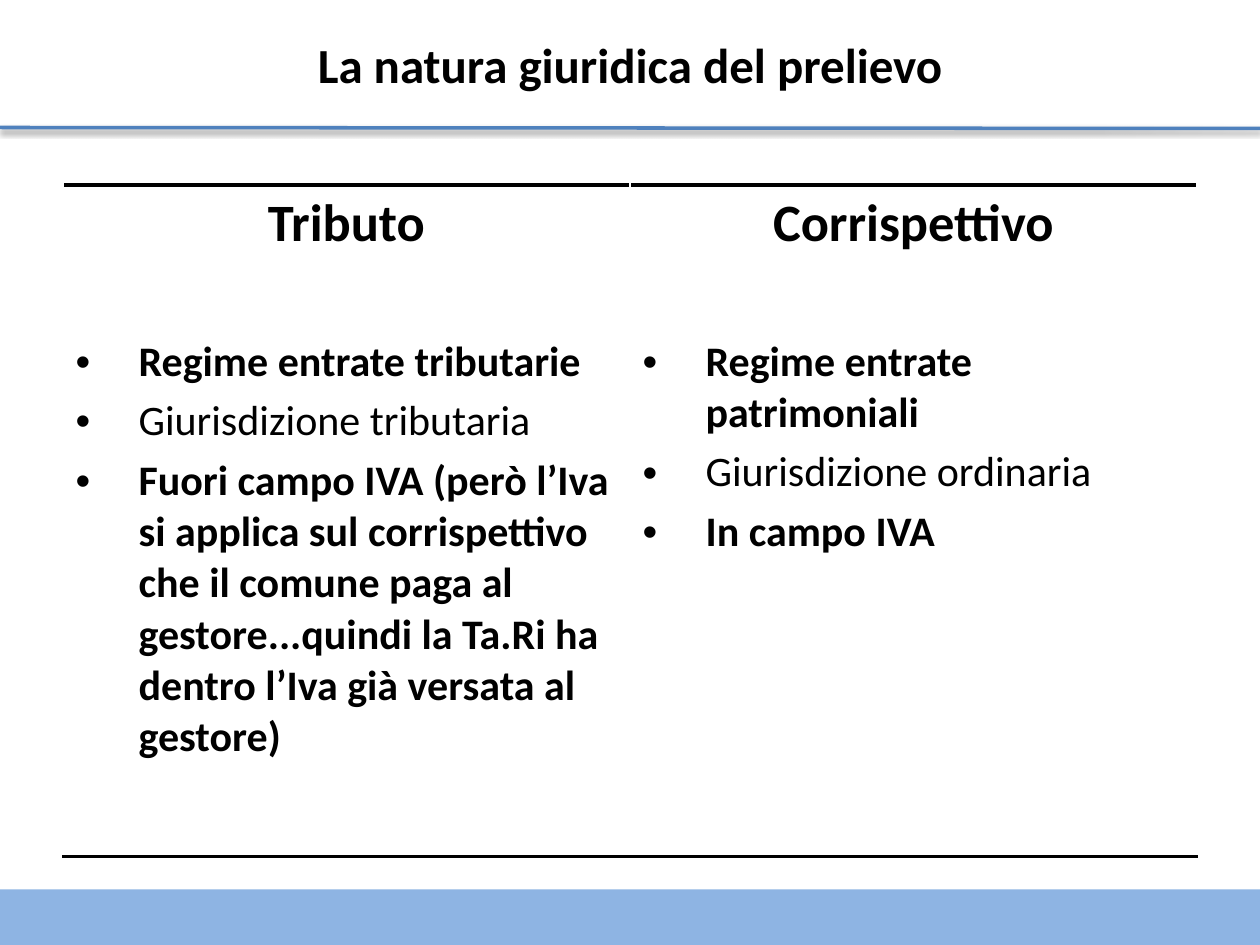
from lxml.etree import SubElement
from pptx import Presentation
from pptx.dml.color import RGBColor
from pptx.enum.shapes import MSO_CONNECTOR, MSO_SHAPE
from pptx.enum.text import MSO_ANCHOR, PP_ALIGN
from pptx.oxml import parse_xml
from pptx.oxml.ns import nsdecls, qn
from pptx.util import Cm, Pt

COLOURS = {"text": "000000", "paper": "FFFFFF", "band": "8EB4E3", "rule": "4F81BD"}
FONT = "Calibri"
COLUMNS = {
    "Tributo": [
        ("Regime entrate tributarie", True),
        ("Giurisdizione tributaria", False),
        ("Fuori campo IVA (però l’Iva si applica sul corrispettivo che il comune "
         "paga al gestore...quindi la Ta.Ri ha dentro l’Iva già versata al gestore)", True),
    ],
    "Corrispettivo": [
        ("Regime entrate patrimoniali", True),
        ("Giurisdizione ordinaria", False),
        ("In campo IVA", True),
    ],
}


def colour(name):
    return RGBColor.from_string(COLOURS[name])


class SlideBuilder:
    def __init__(self, slide):
        self.slide = slide

    def format(self, paragraph, size, bold=True, align=PP_ALIGN.CENTER):
        paragraph.alignment = align
        for run in paragraph.runs:
            run.font.name = FONT
            run.font.size = Pt(size)
            run.font.bold = bold
            run.font.color.rgb = colour("text")

    def title(self, text, width, height):
        shape = self.slide.shapes.add_textbox(0, 0, Cm(width), Cm(height))
        text_frame = shape.text_frame
        text_frame.word_wrap = True
        text_frame.vertical_anchor = MSO_ANCHOR.MIDDLE
        text_frame.text = text
        self.format(text_frame.paragraphs[0], 28)

    def band(self, top, width, height):
        shape = self.slide.shapes.add_shape(
            MSO_SHAPE.RECTANGLE, 0, Cm(top), Cm(width), Cm(height))
        shape.shadow.inherit = False
        shape.fill.solid()
        shape.fill.fore_color.rgb = colour("band")
        shape.line.fill.background()

    def rule(self, start, end):
        connector = self.slide.shapes.add_connector(
            MSO_CONNECTOR.STRAIGHT, *map(Cm, start + end))
        connector.line.color.rgb = colour("rule")
        connector.line.width = Pt(2)
        effects = SubElement(connector._element.spPr, qn("a:effectLst"))
        shadow = SubElement(effects, qn("a:outerShdw"), blurRad=str(Pt(3.1)),
                            dist=str(Pt(1.6)), dir="5400000", rotWithShape="0")
        shade = SubElement(shadow, qn("a:srgbClr"), val=COLOURS["text"])
        SubElement(shade, qn("a:alpha"), val="38000")

    def cell(self, cell, text, border):
        cell.text_frame.text = text
        cell.fill.solid()
        cell.fill.fore_color.rgb = colour("paper")
        cell._tc.get_or_add_tcPr().insert(0, parse_xml(
            f'<a:{border} {nsdecls("a")} w="{Pt(2)}"><a:solidFill>'
            f'<a:srgbClr val="{COLOURS["text"]}"/></a:solidFill></a:{border}>'))
        return cell.text_frame.paragraphs

    def bullet(self, paragraph):
        properties = paragraph._p.get_or_add_pPr()
        properties.set("marL", str(Cm(1.27)))
        properties.set("indent", str(Cm(-1.27)))
        SubElement(properties, qn("a:buFont"), typeface="Arial")
        SubElement(properties, qn("a:buChar"), char="•")

    def comparison(self, columns, left, top, width, heights):
        table = self.slide.shapes.add_table(
            len(heights), len(columns), Cm(left), Cm(top), Cm(width), Cm(sum(heights))).table
        table.first_row = table.horz_banding = False
        for row, height in zip(table.rows, heights):
            row.height = Cm(height)
        for index, (heading, points) in enumerate(columns.items()):
            table.columns[index].width = Cm(width / len(columns))
            self.format(self.cell(table.cell(0, index), heading, "lnT")[0], 30)
            text = "\n".join(point for point, bold in points)
            paragraphs = self.cell(table.cell(1, index), text, "lnB")
            for number, (paragraph, (point, bold)) in enumerate(zip(paragraphs, points)):
                self.format(paragraph, 24, bold, PP_ALIGN.LEFT)
                paragraph.space_before = Pt(4.8 if number else 0)
                self.bullet(paragraph)


def main():
    presentation = Presentation()
    presentation.slide_width, presentation.slide_height = Cm(25.4), Cm(19.05)
    slide = presentation.slides.add_slide(presentation.slide_layouts[6])
    builder = SlideBuilder(slide)
    builder.comparison(COLUMNS, 1.27, 3.73, 22.86, [2.92, 10.62])
    builder.band(17.93, 25.4, 1.12)
    builder.title("La natura giuridica del prelievo", 25.4, 2.59)
    builder.rule((0, 2.57), (25.4, 2.59))
    presentation.save("out.pptx")


if __name__ == "__main__":
    main()
